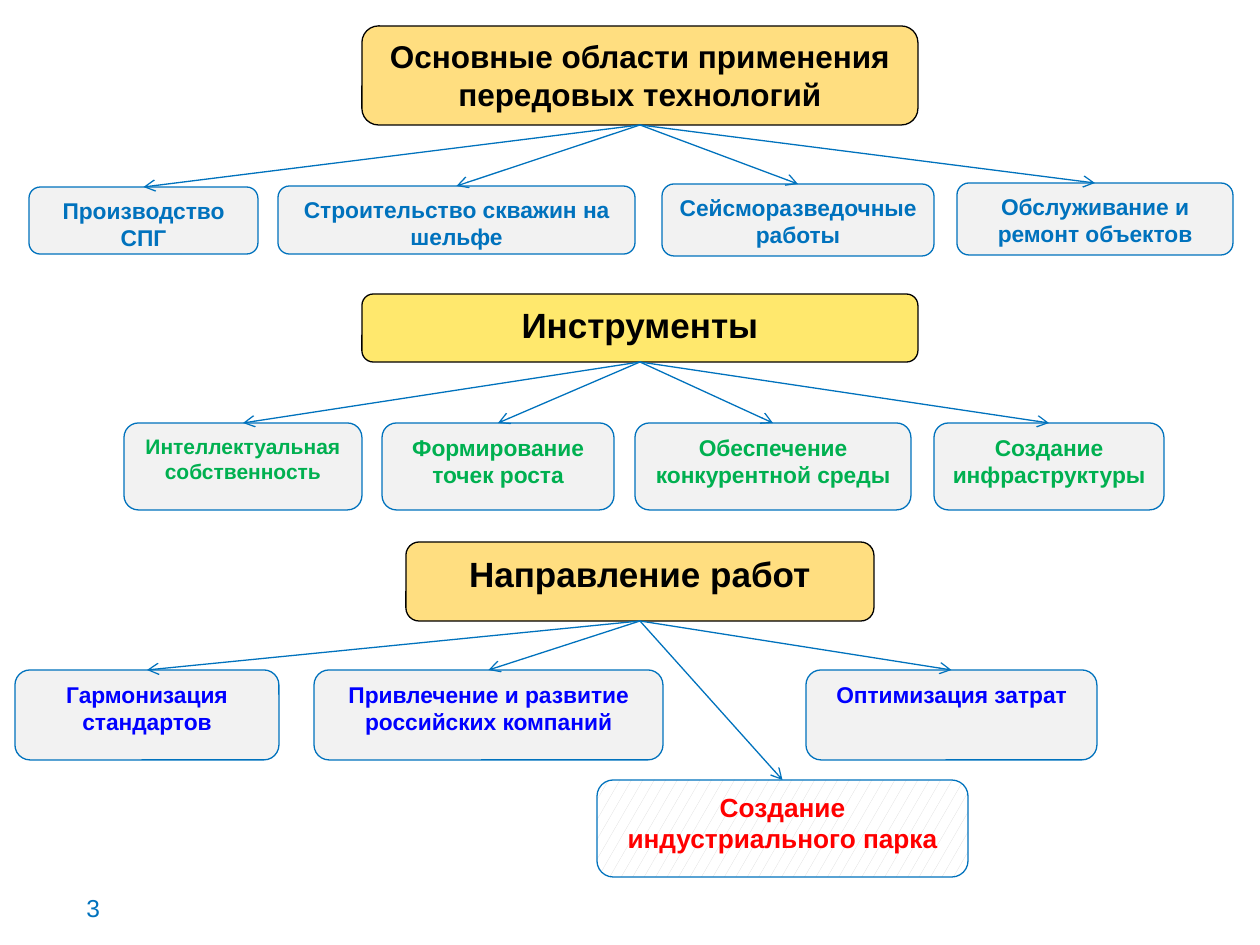
from dataclasses import dataclass

import pptx
import pptx.dml.color
import pptx.enum.dml
import pptx.enum.shapes
import pptx.enum.text
import pptx.oxml
import pptx.oxml.ns
import pptx.util

EMU_PER_PX = 914400 / 126


@dataclass(frozen=True)
class Theme:
    font: str = "Arial"
    black: str = "000000"
    blue: str = "0072BD"
    green: str = "00B050"
    deep_blue: str = "0000FF"
    red: str = "FF0000"
    gold: str = "FFDE80"
    yellow: str = "FFE86D"
    pale: str = "F2F2F2"
    hatch: str = "D9D9D9"
    white: str = "FFFFFF"
    title: int = 18
    heading: int = 20
    accent: int = 15
    number: int = 14
    label: int = 13
    small: int = 12
    line: float = 0.75


THEME = Theme()


def px(n):
    return pptx.util.Emu(round(n * EMU_PER_PX))


def rgb(value):
    return pptx.dml.color.RGBColor.from_string(value)


def write(sp, text, size, color, bold):
    tf = sp.text_frame
    tf.word_wrap = True
    tf.vertical_anchor = pptx.enum.text.MSO_ANCHOR.TOP
    p = tf.paragraphs[0]
    p.text = text
    p.font.name = THEME.font
    p.font.size = pptx.util.Pt(size)
    p.font.bold = bold
    p.font.color.rgb = rgb(color)
    return p


def add_box(s, origin, rect, text, size, color, fill, line):
    """Rounded box; rect is left, top, width, height relative to origin."""
    x, y, w, h = rect
    sp = s.shapes.add_shape(
        pptx.enum.shapes.MSO_SHAPE.ROUNDED_RECTANGLE,
        px(origin[0] + x), px(origin[1] + y), px(w), px(h))
    sp.shadow.inherit = False
    if fill == THEME.hatch:
        sp.fill.patterned()
        sp.fill.pattern = pptx.enum.dml.MSO_PATTERN.SMALL_CONFETTI
        sp.fill.fore_color.rgb = rgb(THEME.hatch)
        sp.fill.back_color.rgb = rgb(THEME.white)
    else:
        sp.fill.solid()
        sp.fill.fore_color.rgb = rgb(fill)
    sp.line.color.rgb = rgb(line)
    sp.line.width = pptx.util.Pt(THEME.line)
    p = write(sp, text, size, color, True)
    p.alignment = pptx.enum.text.PP_ALIGN.CENTER
    return sp


def add_arrow(s, parent, child):
    """Arrow from the bottom of parent to the top of child."""
    line = s.shapes.add_connector(pptx.enum.shapes.MSO_CONNECTOR.STRAIGHT, 0, 0, 0, 0)
    line.begin_connect(parent, 2)
    line.end_connect(child, 0)
    line.line.color.rgb = rgb(THEME.blue)
    line.line.width = pptx.util.Pt(THEME.line)
    ln = line.line._get_or_add_ln()
    ln.append(pptx.oxml.parse_xml(
        f'<a:tailEnd {pptx.oxml.ns.nsdecls("a")} type="arrow"/>'))
    line._element.spPr.append(pptx.oxml.parse_xml(
        f'<a:effectLst {pptx.oxml.ns.nsdecls("a")}/>'))


def add_tree(s, origin, heading, branches):
    """Heading box with an arrow down to each branch box."""
    rect, text, size, fill = heading
    head = add_box(s, origin, rect, text, size, THEME.black, fill, THEME.black)
    for rect, text, size, color, fill in branches:
        child = add_box(s, origin, rect, text, size, color, fill, THEME.blue)
        add_arrow(s, head, child)


def row(color, items):
    return [(rect, text, THEME.label, color, THEME.pale) for rect, text in items]


def add_areas(s, origin):
    heading = ((333, 0, 556, 99), "Основные области применения передовых технологий",
               THEME.title, THEME.gold)
    add_tree(s, origin, heading, row(THEME.blue, [
        ((0, 161, 229, 67), "Производство СПГ"),
        ((249, 160, 357, 68), "Строительство скважин на шельфе"),
        ((633, 158, 272, 72), "Сейсморазведочные работы"),
        ((928, 157, 276, 72), "Обслуживание и ремонт объектов"),
    ]))


def add_tools(s, origin):
    heading = ((238, 0, 556, 68), "Инструменты", THEME.heading, THEME.yellow)
    top, height = 129, 87
    first = ((0, top, 238, height), "Интеллектуальная собственность",
             THEME.small, THEME.green, THEME.pale)
    add_tree(s, origin, heading, [first] + row(THEME.green, [
        ((258, top, 232, height), "Формирование точек роста"),
        ((511, top, 276, height), "Обеспечение конкурентной среды"),
        ((810, top, 230, height), "Создание инфраструктуры"),
    ]))


def add_directions(s, origin):
    heading = ((391, 0, 468, 79), "Направление работ", THEME.heading, THEME.gold)
    top, height = 128, 90
    park = ((582, 238, 371, 97), "Создание индустриального парка",
            THEME.accent, THEME.red, THEME.hatch)
    add_tree(s, origin, heading, row(THEME.deep_blue, [
        ((0, top, 264, height), "Гармонизация стандартов"),
        ((299, top, 349, height), "Привлечение и развитие российских компаний"),
        ((791, top, 291, height), "Оптимизация затрат"),
    ]) + [park])


def add_page_number(s, box):
    sp = s.shapes.add_textbox(*map(px, box))
    write(sp, "3", THEME.number, THEME.blue, False)


def main():
    prs = pptx.Presentation()
    prs.slide_width, prs.slide_height = px(1260), px(945)
    s = prs.slides.add_slide(prs.slide_layouts[6])
    add_areas(s, (29, 26))
    add_tools(s, (124, 294))
    add_directions(s, (15, 542))
    add_page_number(s, (74, 887, 262, 52))
    prs.save("out.pptx")


if __name__ == "__main__":
    main()
